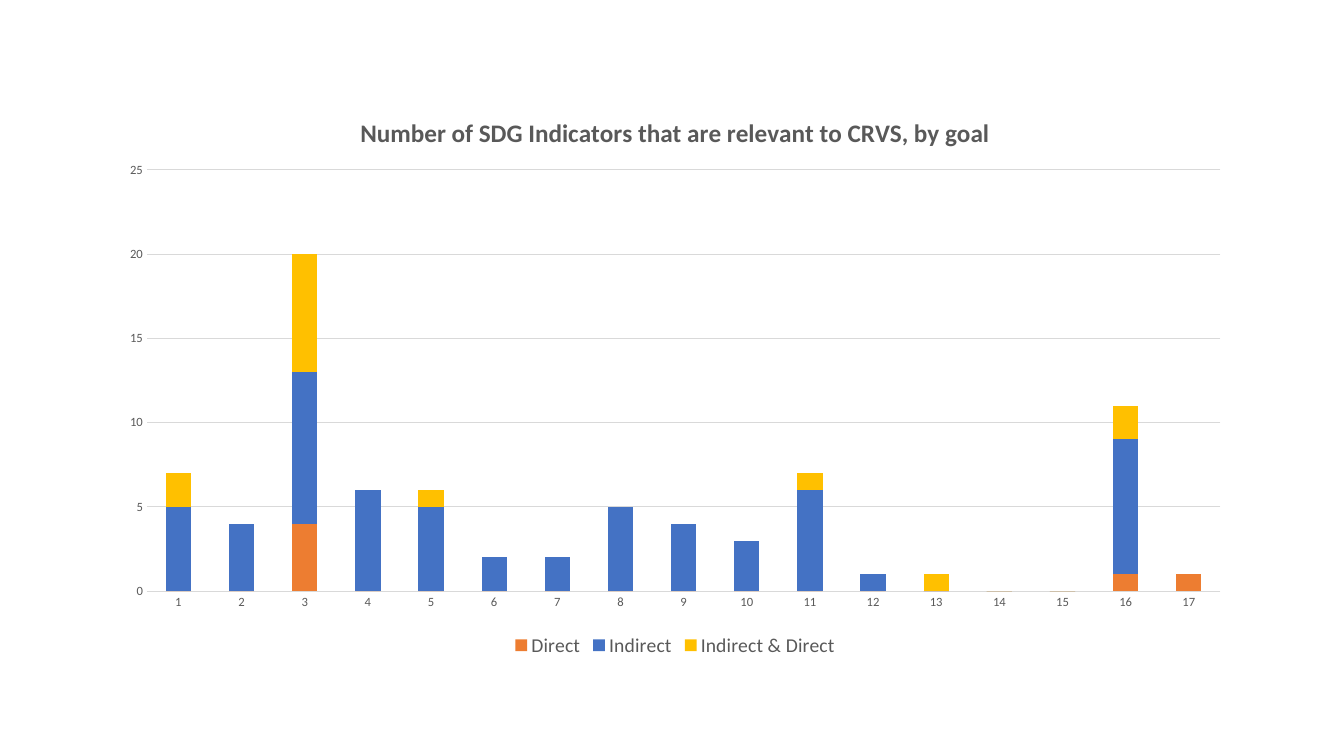
import pptx
import pptx.chart.data
import pptx.dml.color
import pptx.enum.chart
import pptx.oxml
import pptx.oxml.ns
import pptx.util

EMU_PER_PX = 9525
TITLE = "Number of SDG Indicators that are relevant to CRVS, by goal"
GOALS = [str(goal) for goal in range(1, 18)]
SERIES = [
    ("Direct", "ED7D31", [0, 0, 4, 0, 0, 0, 0, 0, 0, 0, 0, 0, 0, 0, 0, 1, 1]),
    ("Indirect", "4472C4", [5, 4, 9, 6, 5, 2, 2, 5, 4, 3, 6, 1, 0, 0, 0, 8, 0]),
    ("Indirect & Direct", "FFC000", [2, 0, 7, 0, 1, 0, 0, 0, 0, 0, 1, 0, 1, 0, 0, 2, 0]),
]


def px(length):
    return pptx.util.Emu(length * EMU_PER_PX)


def color(hex_string):
    return pptx.dml.color.RGBColor.from_string(hex_string)


def format_font(font, size, hex_color, name="Calibri", bold=False):
    font.name = name
    font.size = pptx.util.Pt(size)
    font.bold = bold
    font.color.rgb = color(hex_color)


def write_text(frame, text, **text_format):
    span = frame.paragraphs[0].add_run()
    span.text = text
    format_font(span.font, **text_format)


class SlideBuilder:
    text_color = "595959"
    line_color = "D9D9D9"

    def __init__(self, deck):
        self.page = deck.slides.add_slide(deck.slide_layouts[6])

    def stacked_columns(self, left, top, width, height, categories, series):
        data = pptx.chart.data.CategoryChartData()
        data.categories = categories
        for name, _, values in series:
            data.add_series(name, values)
        frame = self.page.shapes.add_chart(
            pptx.enum.chart.XL_CHART_TYPE.COLUMN_STACKED,
            px(left), px(top), px(width), px(height), data)
        chart = frame.chart
        format_font(chart.font, size=10, hex_color="000000")
        plot = chart.plots[0]
        plot.gap_width = 150
        plot.overlap = 100
        plot.vary_by_categories = False
        for column, (_, fill_color, _) in zip(plot.series, series):
            column.format.fill.solid()
            column.format.fill.fore_color.rgb = color(fill_color)
            column.invert_if_negative = False
        return chart

    def thin_line(self, line):
        line.color.rgb = color(self.line_color)
        line.width = pptx.util.Pt(0.75)

    def axes(self, chart, maximum, step):
        for axis in (chart.category_axis, chart.value_axis):
            axis.major_tick_mark = pptx.enum.chart.XL_TICK_MARK.NONE
            axis.minor_tick_mark = pptx.enum.chart.XL_TICK_MARK.NONE
            format_font(axis.tick_labels.font, size=9, hex_color=self.text_color)
        self.thin_line(chart.category_axis.format.line)
        values = chart.value_axis
        values.minimum_scale = 0
        values.maximum_scale = maximum
        values.major_unit = step
        values.format.line.fill.background()
        values.has_major_gridlines = True
        self.thin_line(values.major_gridlines.format.line)

    def title(self, chart, text):
        chart.has_title = True
        chart.chart_title.include_in_layout = False
        write_text(chart.chart_title.text_frame, text,
                   size=18, hex_color=self.text_color, bold=True)

    def legend(self, chart):
        chart.has_legend = True
        chart.legend.position = pptx.enum.chart.XL_LEGEND_POSITION.BOTTOM
        chart.legend.include_in_layout = False
        format_font(chart.legend.font, size=14, hex_color=self.text_color)

    def plot_area(self, chart, **fractions):
        # Fix the inner plot area as fractions of the chart
        area = chart.element.find(".//" + pptx.oxml.ns.qn("c:plotArea"))
        for old_layout in area.findall(pptx.oxml.ns.qn("c:layout")):
            area.remove(old_layout)
        settings = {"layoutTarget": "inner", "xMode": "edge", "yMode": "edge", **fractions}
        items = "".join(f'<c:{key} val="{value}"/>' for key, value in settings.items())
        area.insert(0, pptx.oxml.parse_xml(
            f'<c:layout {pptx.oxml.ns.nsdecls("c")}>'
            f'<c:manualLayout>{items}</c:manualLayout></c:layout>'))


def main():
    deck = pptx.Presentation()
    deck.slide_width, deck.slide_height = px(1280), px(720)
    builder = SlideBuilder(deck)

    # Indicators per goal
    chart = builder.stacked_columns(102, 90, 1082, 540, GOALS, SERIES)
    builder.axes(chart, maximum=25, step=5)
    builder.plot_area(chart, x=0.035, y=0.133, w=0.945, h=0.743)

    # Title and legend
    builder.title(chart, TITLE)
    builder.legend(chart)

    deck.save("out.pptx")


if __name__ == "__main__":
    main()
